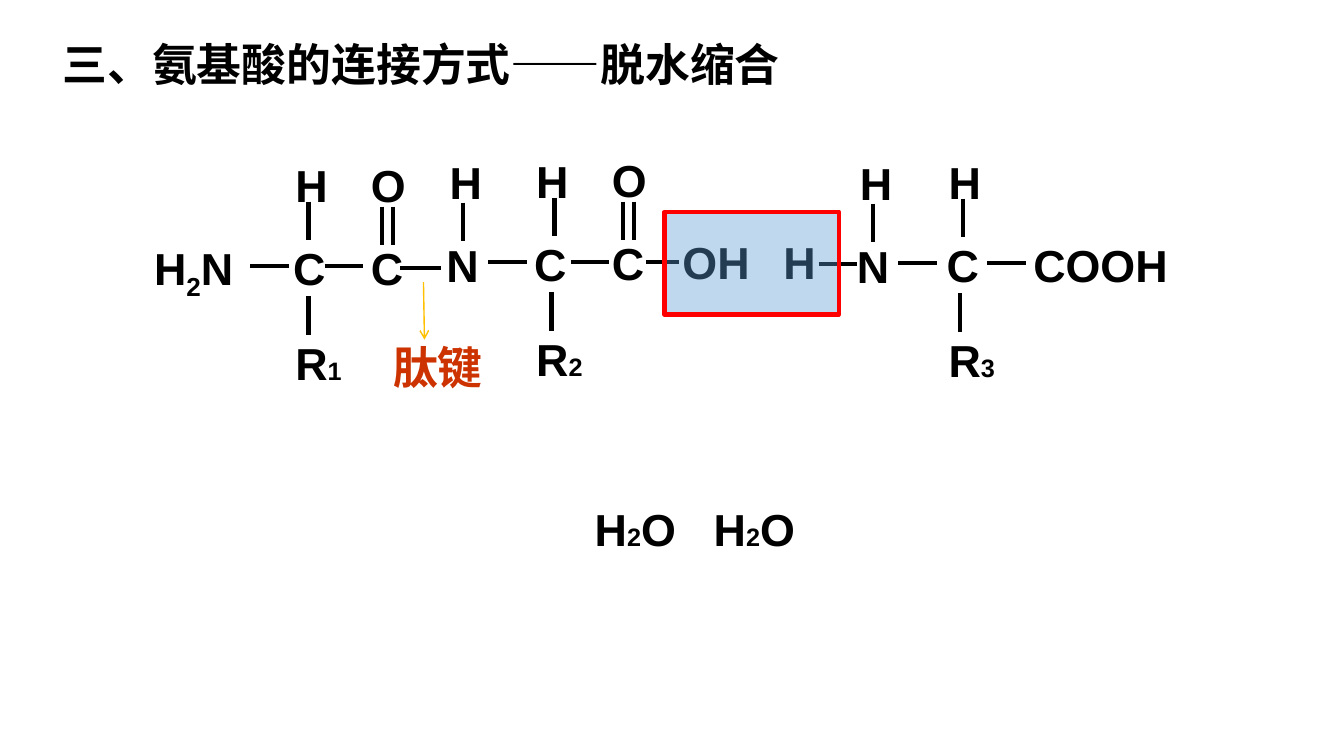
from pptx import Presentation, util as u
from pptx.dml.color import RGBColor
from pptx.enum import shapes, text
from pptx.oxml import parse_xml
from pptx.oxml.ns import nsdecls, qn
from lxml import etree

BLACK, RED, BLUE, GOLD, RUST = "000000", "FF0000", "5B9BD5", "FFC000", "CC3300"
FONT, BIG, SMALL = "Arial", 32, 18
ROW = 0.64      # height of a line of text
STEP = 0.82     # from a backbone atom up to the atom above it
BOND = 0.385    # length of a bond
MID = 0.3       # from the top of an atom's box to its side bonds

TITLE = "三、氨基酸的连接方式——脱水缩合"

# left, top and R number of each alpha carbon, then its bonds:
# start of left, start of right, x of upper, x of lower
alphas = [
    (2.81, 2.34, "1", -0.33, 0.41, 0.25, 0.25),
    (5.2, 2.3, "2", -0.36, 0.46, 0.3, 0.27),
    (9.29, 2.31, "3", -0.38, 0.5, 0.26, 0.23),
]
acids = [(3.58, 2.34), (5.97, 2.29)]     # carbonyl groups
amines = [(4.33, 2.31), (8.4, 2.32)]     # N with H above

# left, top, width, runs of (text, size, baseline)
ends = [
    (1.43, 2.34, 1.32, [("H", BIG, 0), ("2", BIG, -25), ("N", BIG, 0)]),
    (6.67, 2.28, 1.1, [("OH", BIG, 0)]),
    (7.67, 2.28, 0.62, [("H", BIG, 0)]),
    (10.15, 2.31, 1.56, [("COOH", BIG, 0)]),
]
links = [(3.97, 2.66, 4.37), (6.41, 2.6, 6.73), (8.12, 2.62, 8.5)]
water = [("H", BIG, 0), ("2", SMALL, 0), ("O", BIG, 0)]
waters = [5.8, 6.98]

deck = Presentation()
deck.slide_width, deck.slide_height = u.Inches(13.33), u.Inches(7.5)
slide = deck.slides.add_slide(deck.slide_layouts[5])


def tint(code):
    return RGBColor.from_string(code)


def fill_text(box, runs, color=BLACK):
    frame = box.text_frame
    frame.word_wrap = True
    frame.auto_size = text.MSO_AUTO_SIZE.NONE
    frame.vertical_anchor = text.MSO_ANCHOR.TOP
    para = frame.paragraphs[0]
    para.alignment = text.PP_ALIGN.LEFT
    props = para._p.get_or_add_pPr()
    props.append(parse_xml(
        f'<a:spcBef {nsdecls("a")}><a:spcPct val="50000"/></a:spcBef>'))
    for words, size, base in runs:
        run = para.add_run()
        run.text = words
        font = run.font
        font.name, font.size, font.bold = FONT, u.Pt(size), True
        font.color.rgb = tint(color)
        if base:
            run._r.get_or_add_rPr().set("baseline", str(base * 1000))


def label(x, y, width, runs, color=BLACK):
    box = slide.shapes.add_textbox(*map(u.Inches, (x, y, width, ROW)))
    fill_text(box, runs, color)


def atom(x, y, name):
    label(x, y, 0.62, [(name, BIG, 0)])


def line(x1, y1, x2, y2, color=BLACK, width=3):
    rule = slide.shapes.add_connector(
        shapes.MSO_CONNECTOR.STRAIGHT, *map(u.Inches, (x1, y1, x2, y2)))
    rule.line.color.rgb = tint(color)
    rule.line.width = u.Pt(width)
    etree.SubElement(rule._element.spPr, qn("a:effectLst"))
    return rule


def across(x, y):
    line(x, y, x + BOND, y)


def down(x, y):
    line(x, y, x, y + BOND)


title = slide.shapes.title
title.left, title.top, title.width, title.height = map(
    u.Inches, (0.52, 0.31, 8.33, ROW))
fill_text(title, [(TITLE, BIG, 0)])

for x, y, num, left, right, up, low in alphas:
    atom(x, y, "C")
    atom(x + 0.02, y - STEP, "H")
    label(x + 0.02, y + 0.94, 1.09, [("R", BIG, 0), (num, SMALL, 0)])
    across(x + left, y + MID)
    across(x + right, y + MID)
    down(x + up, y - 0.34)
    down(x + low, y + 0.6)

for x, y in acids:
    atom(x, y, "C")
    atom(x, y - STEP, "O")
    for shift in (0.21, 0.32):
        down(x + shift, y - 0.29)

for x, y in amines:
    atom(x, y, "N")
    atom(x + 0.03, y - STEP, "H")
    down(x + 0.26, y - MID)

for end in ends:
    label(*end)
for x1, y, x2 in links:
    line(x1, y, x2, y)

frame = slide.shapes.add_shape(
    shapes.MSO_SHAPE.RECTANGLE, *map(u.Inches, (6.59, 2.1, 1.73, 1.02)))
frame.shadow.inherit = False
frame.fill.solid()
frame.fill.fore_color.rgb = tint(BLUE)
shade = frame._element.spPr.find(qn("a:solidFill"))[0]
etree.SubElement(shade, qn("a:alpha"), val="39000")
frame.line.color.rgb = tint(RED)
frame.line.width = u.Pt(3)

for x in waters:
    label(x, 4.93, 1.18, water)

label(3.8, 3.32, 1.18, [("肽键", BIG, 0)], RUST)
arrow = line(4.2, 2.8, 4.21, 3.37, GOLD, 1)
etree.SubElement(arrow.line._get_or_add_ln(), qn("a:tailEnd"), type="arrow")

deck.save("out.pptx")
